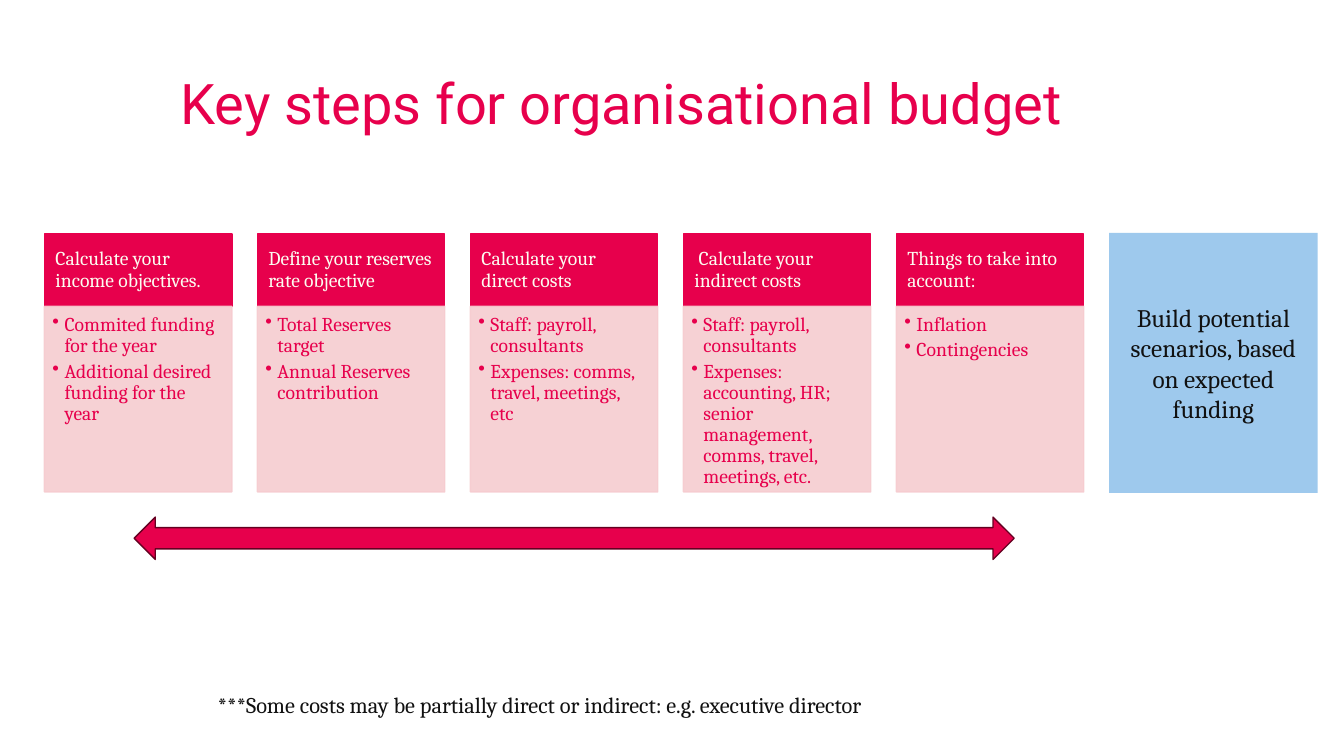
from lxml import etree
from pptx import Presentation
from pptx.dml.color import RGBColor
from pptx.enum.shapes import MSO_SHAPE
from pptx.enum.text import MSO_ANCHOR, PP_ALIGN
from pptx.oxml.ns import qn
from pptx.util import Inches, Pt

RECT, ARROW = MSO_SHAPE.RECTANGLE, MSO_SHAPE.LEFT_RIGHT_ARROW
TOP, MIDDLE = MSO_ANCHOR.TOP, MSO_ANCHOR.MIDDLE
LEFT, CENTER = PP_ALIGN.LEFT, PP_ALIGN.CENTER

THEME = {
    "red": RGBColor.from_string("E7004C"),
    "pink": RGBColor.from_string("F6CCD0"),
    "blue": RGBColor.from_string("9EC9ED"),
    "wine": RGBColor.from_string("650021"),
    "cream": RGBColor.from_string("FCFCF1"),
    "ink": RGBColor.from_string("111111"),
    "head": "Roboto",
    "body": "Cambria",
    "title": Pt(40),
    "step": Pt(14),
    "build": Pt(18),
    "note": Pt(16),
}

STEPS = [
    ("Calculate your income objectives.",
     ["Commited funding for the year", "Additional desired funding for the year"]),
    ("Define your reserves rate objective",
     ["Total Reserves target", "Annual Reserves contribution"]),
    ("Calculate your direct costs",
     ["Staff: payroll, consultants", "Expenses: comms, travel, meetings, etc"]),
    (" Calculate your indirect costs",
     ["Staff: payroll, consultants",
      "Expenses: accounting, HR; senior management, comms, travel, meetings, etc."]),
    ("Things to take into account:", ["Inflation", "Contingencies"]),
]

deck = Presentation()
deck.slide_width, deck.slide_height = Inches(13.33), Inches(7.5)
slide = deck.slides.add_slide(deck.slide_layouts[6])


def draw(kind, place, fill, line=None, alpha=None):
    shape = slide.shapes.add_shape(kind, *map(Inches, place))
    shape.shadow.inherit = False
    shape.fill.solid()
    shape.fill.fore_color.rgb = THEME[fill]
    if line:
        shape.line.color.rgb = THEME[line]
        shape.line.width = Pt(1)
    else:
        shape.line.fill.background()
    if alpha:
        for color in shape._element.spPr.iter(qn("a:srgbClr")):
            etree.SubElement(color, qn("a:alpha"), val=str(alpha * 1000))
    return shape


def write(shape, lines, size, color, face="body", pad=(0.1, 0.05, 0.1, 0.05),
          anchor=TOP, align=LEFT, pitch=1.0, after=0, bullet=False):
    frame = shape.text_frame
    sides = ("margin_left", "margin_top", "margin_right", "margin_bottom")
    look = dict(zip(sides, map(Inches, pad)), word_wrap=True, vertical_anchor=anchor)
    for name, value in look.items():
        setattr(frame, name, value)
    for i, line in enumerate(lines):
        para = frame.add_paragraph() if i else frame.paragraphs[0]
        if bullet:
            props = para._p.get_or_add_pPr()
            props.set("marL", str(Inches(0.12)))
            props.set("indent", str(-Inches(0.12)))
            etree.SubElement(props, qn("a:buChar"), char="•")
        form = {"alignment": align, "line_spacing": pitch, "space_after": Pt(after)}
        for name, value in form.items():
            setattr(para, name, value)
        run = para.add_run()
        run.text = line
        run.font.color.rgb = THEME[color]
        for name, value in {"name": THEME[face], "size": THEME[size]}.items():
            setattr(run.font, name, value)


title = slide.shapes.add_textbox(*map(Inches, (1.79, 0.76, 10.63, 0.66)))
write(title, ["Key steps for organisational budget"], "title", "red", "head",
      pad=(0, 0, 0, 0), pitch=0.9)

for i, (head, items) in enumerate(STEPS):
    left = 0.44 + i * 2.1125
    top = draw(RECT, (left, 2.32, 1.86, 0.72), "red", "red")
    write(top, [head], "step", "cream", pad=(0.11, 0.06, 0.11, 0.06),
          anchor=MIDDLE, pitch=0.9)
    card = draw(RECT, (left, 3.04, 1.86, 1.84), "pink", "pink", 90)
    write(card, items, "step", "red", pad=(0.08, 0.08, 0.11, 0.12),
          pitch=0.9, after=3, bullet=True)

build = draw(RECT, (11, 2.31, 2.07, 2.58), "blue")
write(build, ["Build potential scenarios, based on expected funding"], "build", "ink",
      anchor=MIDDLE, align=CENTER)

note = slide.shapes.add_textbox(*map(Inches, (2.06, 6.81, 8.94, 0.37)))
write(note, ["***Some costs may be partially direct or indirect: e.g. executive director"],
      "note", "ink")

draw(ARROW, (1.33, 5.13, 8.73, 0.42), "red", "wine")

deck.save("out.pptx")
